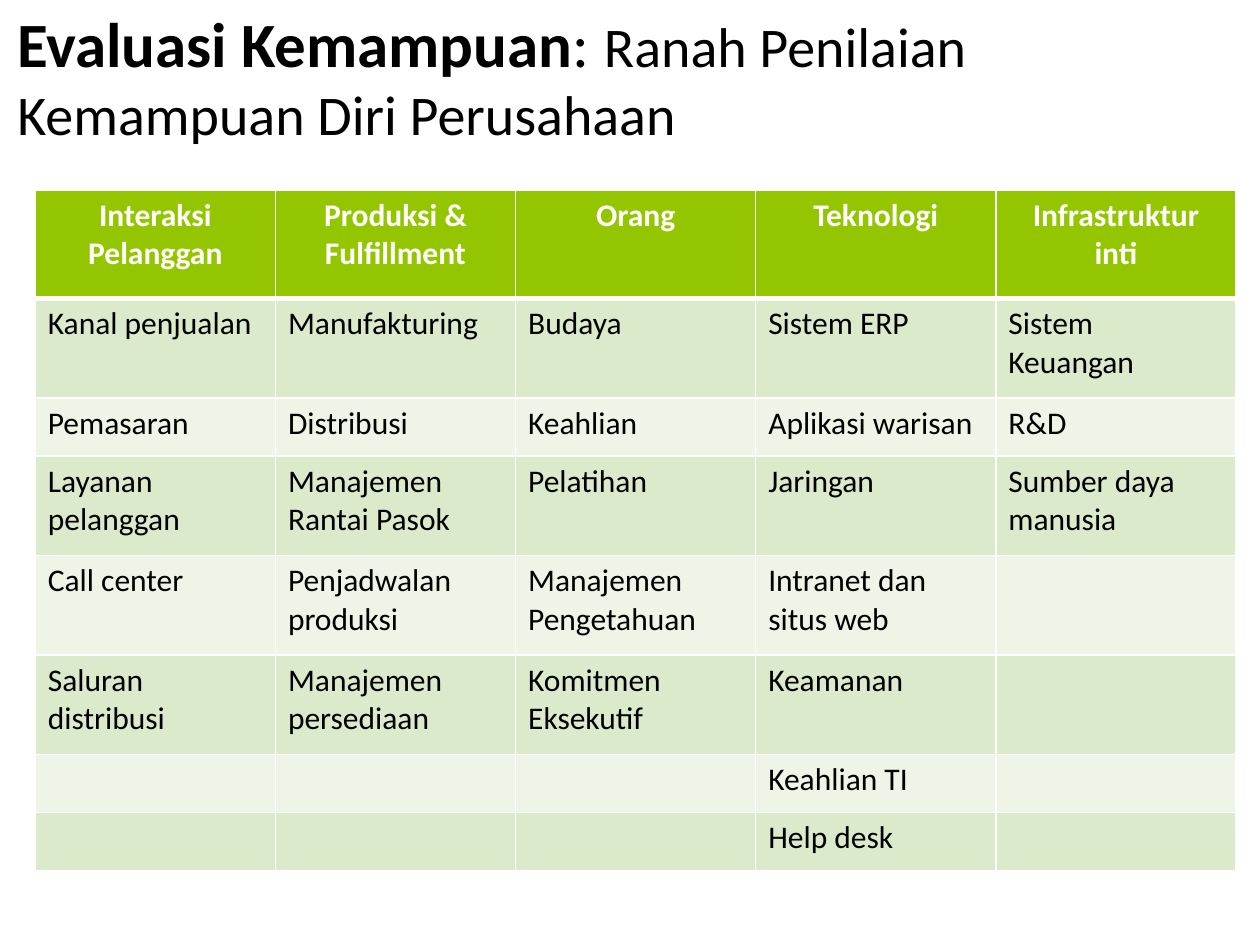
from dataclasses import dataclass

from lxml.etree import SubElement as Sub
from pptx import Presentation as Deck
from pptx.dml.color import RGBColor as Color
from pptx.enum.text import MSO_ANCHOR as Anchor, PP_ALIGN as Align
from pptx.oxml.ns import qn
from pptx.util import Inches, Pt


@dataclass(frozen=True)
class Theme:
    font: str = "Calibri"
    ink: str = "000000"
    white: str = "FFFFFF"
    head: str = "94C600"
    bands: tuple = ("DCEACC", "EEF5E7")
    big: int = 36
    mid: int = 32
    body: int = 18
    thin: int = 1
    thick: int = 3


@dataclass(frozen=True)
class Row:
    high: float
    words: tuple


@dataclass(frozen=True)
class Piece:
    text: str
    size: int
    bold: bool = False


LOOK = Theme()
WIDE = 9.53
TITLE = (
    Piece("Evaluasi Kemampuan", LOOK.big, True),
    Piece(": ", LOOK.big),
    Piece("Ranah Penilaian Kemampuan Diri Perusahaan", LOOK.mid),
)
ROWS = (
    Row(0.86, ("Interaksi Pelanggan", "Produksi & Fulfillment", "Orang",
               "Teknologi", "Infrastruktur inti")),
    Row(0.79, ("Kanal penjualan", "Manufakturing", "Budaya", "Sistem ERP",
               "Sistem Keuangan")),
    Row(0.46, ("Pemasaran", "Distribusi", "Keahlian", "Aplikasi warisan", "R&D")),
    Row(0.79, ("Layanan pelanggan", "Manajemen Rantai Pasok", "Pelatihan",
               "Jaringan", "Sumber daya manusia")),
    Row(0.79, ("Call center", "Penjadwalan produksi", "Manajemen Pengetahuan",
               "Intranet dan situs web", "")),
    Row(0.79, ("Saluran distribusi", "Manajemen persediaan", "Komitmen Eksekutif",
               "Keamanan", "")),
    Row(0.46, ("", "", "", "Keahlian TI", "")),
    Row(0.46, ("", "", "", "Help desk", "")),
)


def style(run, size: int, color: str, bold: bool) -> None:
    font = run.font
    font.name = LOOK.font
    font.size = Pt(size)
    font.bold = bold
    font.color.rgb = Color.from_string(color)


def edge(cell, row: int) -> None:
    props = cell._tc.get_or_add_tcPr()
    sizes = {
        "L": LOOK.thin,
        "R": LOOK.thin,
        "T": LOOK.thick if row == 1 else LOOK.thin,
        "B": LOOK.thick if row == 0 else LOOK.thin,
    }
    for spot, (side, size) in enumerate(sizes.items()):
        line = Sub(props, qn(f"a:ln{side}"), w=str(Pt(size)))
        Sub(Sub(line, qn("a:solidFill")), qn("a:srgbClr"), val=LOOK.white)
        props.insert(spot, line)


def paint(cell, text: str, row: int) -> None:
    top = row == 0
    cell.fill.solid()
    cell.fill.fore_color.rgb = Color.from_string(
        LOOK.head if top else LOOK.bands[(row - 1) % 2])
    edge(cell, row)
    if text:
        cell.text_frame.text = text
        para = cell.text_frame.paragraphs[0]
        para.alignment = Align.CENTER if top else Align.LEFT
        style(para.runs[0], LOOK.body, LOOK.white if top else LOOK.ink, top)


def title(slide) -> None:
    box = slide.shapes.add_textbox(
        Inches(0.04), Inches(0.05), Inches(8.74), Inches(1.1))
    frame = box.text_frame
    frame.word_wrap = True
    frame.vertical_anchor = Anchor.MIDDLE
    para = frame.paragraphs[0]
    for piece in TITLE:
        run = para.add_run()
        run.text = piece.text
        style(run, piece.size, LOOK.ink, piece.bold)


def grid(slide) -> None:
    count = len(ROWS[0].words)
    table = slide.shapes.add_table(
        len(ROWS), count, Inches(0.28), Inches(1.51), Inches(WIDE),
        Inches(sum(row.high for row in ROWS))).table
    for col in table.columns:
        col.width = Inches(WIDE / count)
    for at, row in enumerate(ROWS):
        table.rows[at].height = Inches(row.high)
        for col, text in enumerate(row.words):
            paint(table.cell(at, col), text, at)


def main() -> None:
    deck = Deck()
    deck.slide_width, deck.slide_height = Inches(10), Inches(7.5)
    slide = deck.slides.add_slide(deck.slide_layouts[6])
    title(slide)
    grid(slide)
    deck.save("out.pptx")


if __name__ == "__main__":
    main()
